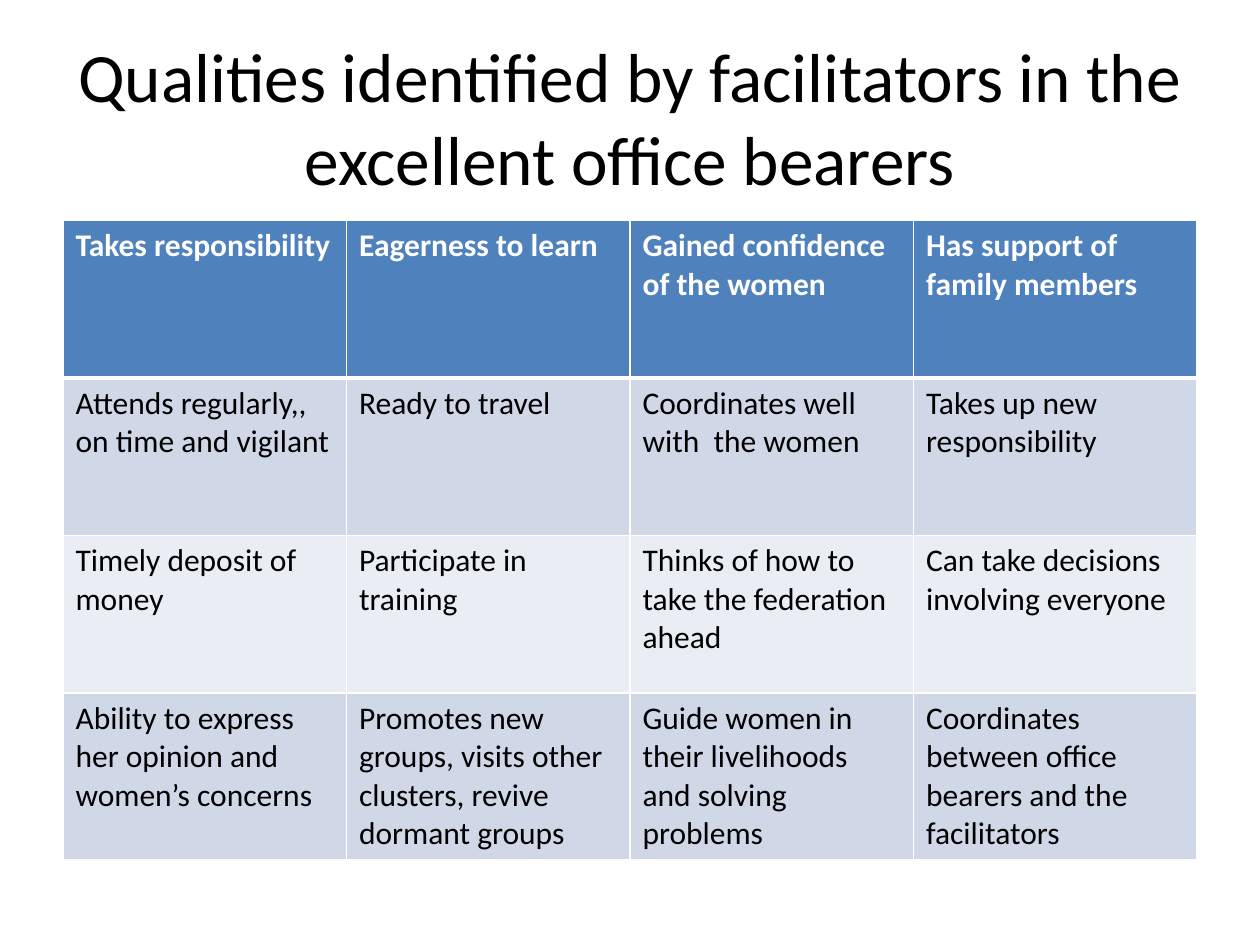
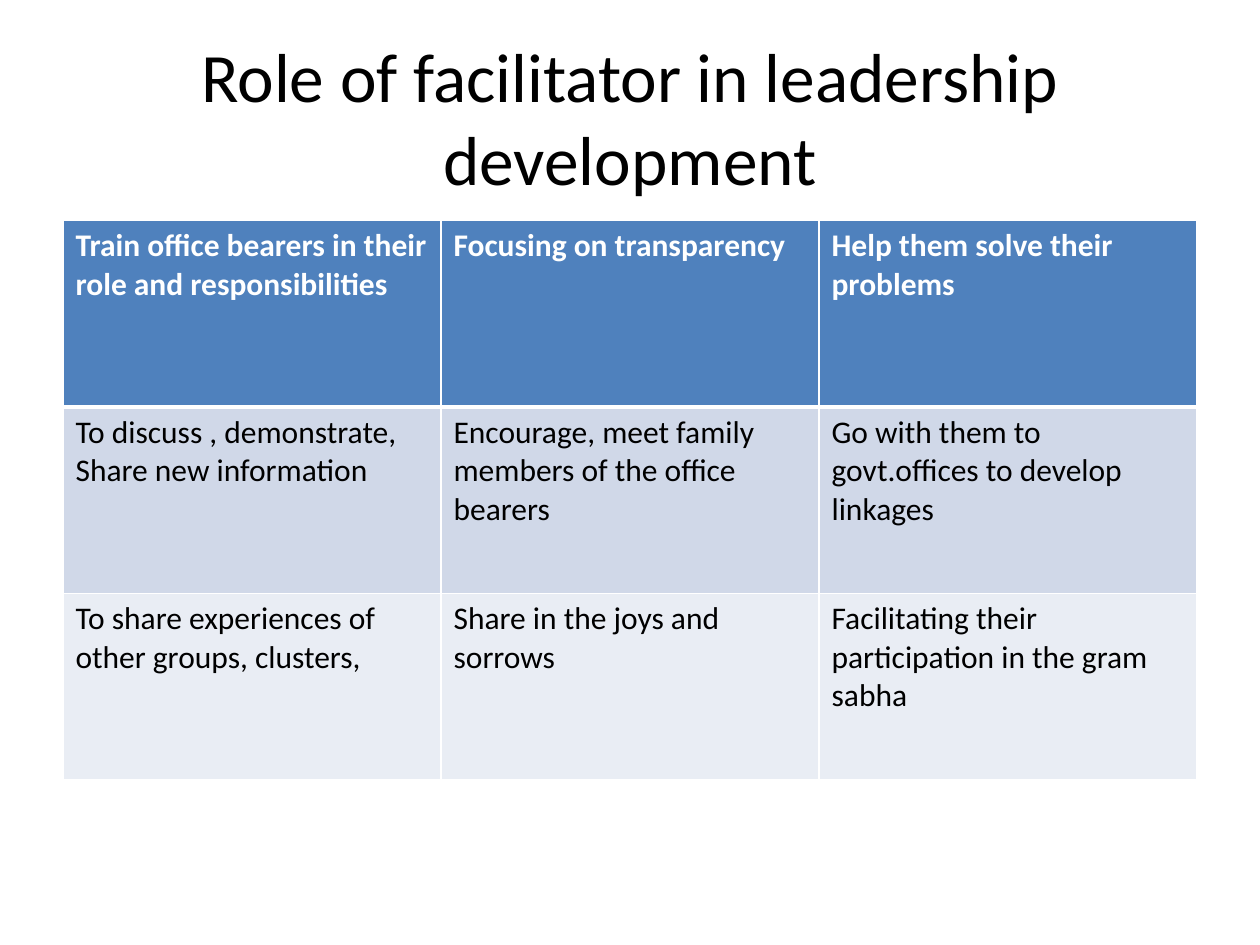
"""Build two slides, each with a title above a banded table of qualities or roles."""
from dataclasses import dataclass

from lxml import etree
from pptx import Presentation
from pptx import util as u
from pptx.dml.color import RGBColor
from pptx.enum import text
from pptx.oxml.ns import qn

SLIDES = [
    {
        "title": "Qualities identified by facilitators in the excellent office bearers",
        "row_height": 1.25,
        "rows": [
            ("Takes responsibility", "Eagerness to learn",
             "Gained confidence of the women", "Has support of family members"),
            ("Attends regularly,, on time and vigilant", "Ready to travel",
             "Coordinates well with  the women", "Takes up new responsibility"),
            ("Timely deposit of money", "Participate in training",
             "Thinks of how to take the federation ahead",
             "Can take decisions involving everyone"),
            ("Ability to express her opinion and women’s concerns",
             "Promotes new groups, visits other clusters, revive dormant groups",
             "Guide women in their livelihoods and solving problems",
             "Coordinates between office bearers and the facilitators"),
        ],
    },
    {
        "title": "Role of facilitator in leadership development",
        "row_height": 1.48,
        "rows": [
            ("Train office bearers in their role and responsibilities",
             "Focusing on transparency", "Help them solve their problems"),
            ("To discuss , demonstrate,\nShare new information",
             "Encourage, meet family members of the office bearers",
             "Go with them to govt.offices to develop linkages"),
            ("To share experiences of other groups, clusters,",
             "Share in the joys and sorrows",
             "Facilitating their participation in the gram sabha"),
        ],
    },
]


@dataclass(frozen=True)
class Theme:
    font: str = "Calibri"
    title_size: float = 39.6
    cell_size: float = 18
    dark: str = "000000"
    light: str = "FFFFFF"
    header: str = "4F81BD"
    bands: tuple = ("D0D8E8", "E9EDF4")
    thin: float = 1
    thick: float = 3


THEME = Theme()
LEFT, WIDTH = 0.5, 9
TITLE_TOP, TITLE_HEIGHT, TABLE_TOP = 0.3, 1.25, 1.75


def apply(target, values):
    for name, value in values.items():
        setattr(target, name, value)


def style_text(frame, size, color, bold=False):
    for para in frame.paragraphs:
        for span in para.runs:
            apply(span.font, {"name": THEME.font, "size": u.Pt(size), "bold": bold})
            span.font.color.rgb = RGBColor.from_string(color)


def add_borders(cell, widths):
    properties = cell._tc.get_or_add_tcPr()
    for index, (side, width) in enumerate(widths.items()):
        line = etree.Element(qn(f"a:ln{side}"), w=str(u.Pt(width)))
        fill = etree.SubElement(line, qn("a:solidFill"))
        etree.SubElement(fill, qn("a:srgbClr"), val=THEME.light)
        properties.insert(index, line)


def add_title(page, wording):
    title = page.shapes.title
    apply(title, {"left": u.Inches(LEFT), "top": u.Inches(TITLE_TOP),
                  "width": u.Inches(WIDTH), "height": u.Inches(TITLE_HEIGHT)})
    frame = title.text_frame
    frame.text = wording
    apply(frame, {"word_wrap": True, "auto_size": text.MSO_AUTO_SIZE.NONE,
                  "vertical_anchor": text.MSO_ANCHOR.MIDDLE})
    frame.paragraphs[0].alignment = text.PP_ALIGN.CENTER
    style_text(frame, THEME.title_size, THEME.dark)


def style_cell(cell, row):
    is_header = row == 0
    fill = THEME.header if is_header else THEME.bands[(row - 1) % 2]
    cell.fill.solid()
    cell.fill.fore_color.rgb = RGBColor.from_string(fill)
    color = THEME.light if is_header else THEME.dark
    style_text(cell.text_frame, THEME.cell_size, color, is_header)
    add_borders(cell, {"L": THEME.thin, "R": THEME.thin,
                       "T": THEME.thick if row == 1 else THEME.thin,
                       "B": THEME.thick if is_header else THEME.thin})


def add_grid(page, rows, row_height):
    count = len(rows[0])
    table = page.shapes.add_table(
        len(rows), count, u.Inches(LEFT), u.Inches(TABLE_TOP),
        u.Inches(WIDTH), u.Inches(row_height * len(rows))).table
    for column in table.columns:
        column.width = u.Inches(WIDTH / count)
    for row, wordings in enumerate(rows):
        table.rows[row].height = u.Inches(row_height)
        for column, wording in enumerate(wordings):
            cell = table.cell(row, column)
            cell.text = wording
            style_cell(cell, row)


def main():
    deck = Presentation()
    apply(deck, {"slide_width": u.Inches(10), "slide_height": u.Inches(7.5)})
    for content in SLIDES:
        page = deck.slides.add_slide(deck.slide_layouts.get_by_name("Title Only"))
        add_title(page, content["title"])
        add_grid(page, content["rows"], content["row_height"])
    deck.save("out.pptx")


if __name__ == "__main__":
    main()
